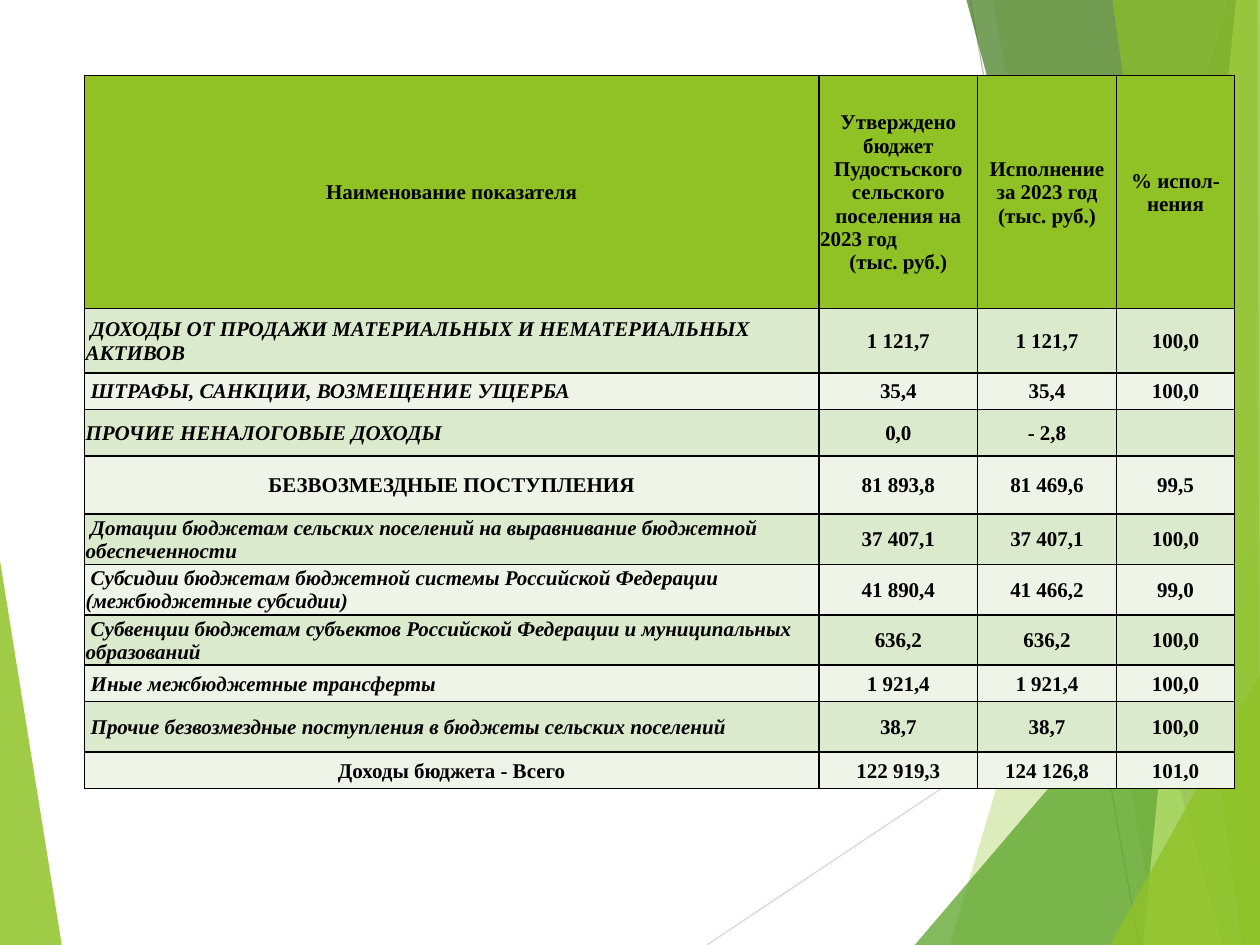
"""Build the slide with the table of budget income execution for 2023."""
from lxml import etree
from pptx import Presentation
from pptx.dml.color import RGBColor
from pptx.enum.shapes import MSO_CONNECTOR
from pptx.enum.text import MSO_ANCHOR, PP_ALIGN
from pptx.oxml import parse_xml
from pptx.oxml.ns import nsdecls, qn
from pptx.util import Inches, Pt

STRAIGHT = MSO_CONNECTOR.STRAIGHT
MIDDLE = MSO_ANCHOR.MIDDLE
LEFT, CENTER = PP_ALIGN.LEFT, PP_ALIGN.CENTER

COLORS = {
    "lime": "90C226",
    "green": "54A021",
    "forest": "3F7819",
    "pale_lime": "C0E474",
    "light_gray": "D9D9D9",
    "gray": "BFBFBF",
    "odd_row": "DBE9CD",
    "even_row": "EEF4E8",
    "black": "000000",
}

RAYS = [
    ([(9.75, 0), (7.54, 7.5), (10, 7.5), (10, 0)], "lime", 30),
    ([(7.88, 0), (9.19, 7.5), (10, 7.5), (10, 0)], "lime", 20),
    ([(7.26, 7.5), (10, 4.29), (10, 7.5)], "green", 72),
    ([(7.67, 0), (9.7, 7.5), (10, 7.5), (10, 0)], "forest", 70),
    ([(9.81, 0), (9.07, 7.5), (10, 7.5), (10, 0)], "pale_lime", 70),
    ([(8.83, 0), (9.86, 7.5), (10, 7.5), (9.98, 0)], "lime", 65),
    ([(8.81, 7.5), (10, 5.35), (10, 7.5)], "lime", 80),
]

COLUMN_WIDTHS = [5.83, 1.26, 1.1, 0.94]
ROW_HEIGHTS = [1.85, 0.51, 0.29, 0.37, 0.46, 0.4, 0.4, 0.4, 0.29, 0.4, 0.29]

HEADER = [
    [("Наименование показателя", CENTER)],
    [
        ("Утверждено бюджет Пудостьского сельского поселения на", CENTER),
        ("2023 год", LEFT),
        ("(тыс. руб.)", CENTER),
    ],
    [("Исполнение за 2023 год (тыс. руб.)", CENTER)],
    [("% испол-нения", CENTER)],
]

ITEM = {"align": LEFT, "italic": True, "indent": 0.04}
FLUSH_ITEM = {"align": LEFT, "italic": True}
TOTAL = {"align": CENTER}

ROWS = [
    (ITEM, "ДОХОДЫ ОТ ПРОДАЖИ МАТЕРИАЛЬНЫХ И НЕМАТЕРИАЛЬНЫХ АКТИВОВ",
     "1 121,7", "1 121,7", "100,0"),
    (ITEM, "ШТРАФЫ, САНКЦИИ, ВОЗМЕЩЕНИЕ УЩЕРБА", "35,4", "35,4", "100,0"),
    (FLUSH_ITEM, "ПРОЧИЕ НЕНАЛОГОВЫЕ ДОХОДЫ", "0,0", "- 2,8", ""),
    (TOTAL, "БЕЗВОЗМЕЗДНЫЕ ПОСТУПЛЕНИЯ", "81 893,8", "81 469,6", "99,5"),
    (ITEM, "Дотации бюджетам сельских поселений на выравнивание бюджетной обеспеченности",
     "37 407,1", "37 407,1", "100,0"),
    (ITEM, "Субсидии бюджетам бюджетной системы Российской Федерации (межбюджетные субсидии)",
     "41 890,4", "41 466,2", "99,0"),
    (ITEM, "Субвенции бюджетам субъектов Российской Федерации и муниципальных образований",
     "636,2", "636,2", "100,0"),
    (ITEM, "Иные межбюджетные трансферты", "1 921,4", "1 921,4", "100,0"),
    (ITEM, "Прочие безвозмездные поступления в бюджеты сельских поселений",
     "38,7", "38,7", "100,0"),
    (TOTAL, "Доходы бюджета - Всего", "122 919,3", "124 126,8", "101,0"),
]


class SlideBuilder:
    font_format = {"name": "Times New Roman", "size": Pt(12), "bold": True}
    cell_format = {
        "vertical_anchor": MIDDLE,
        "margin_left": Inches(0.01),
        "margin_top": Inches(0.01),
        "margin_right": Inches(0.01),
        "margin_bottom": 0,
    }

    def __init__(self, slide):
        self.slide = slide

    def color(self, name):
        return RGBColor.from_string(COLORS[name])

    def polygon(self, points, color, opacity):
        corners = [(Inches(x), Inches(y)) for x, y in points]
        builder = self.slide.shapes.build_freeform(*corners[0])
        builder.add_line_segments(corners[1:])
        shape = builder.convert_to_shape()
        shape.shadow.inherit = False
        shape.line.fill.background()
        shape.fill.solid()
        shape.fill.fore_color.rgb = self.color(color)
        color_element = next(shape.element.spPr.iter(qn("a:srgbClr")))
        alpha = etree.SubElement(color_element, qn("a:alpha"))
        alpha.set("val", str(opacity * 1000))

    def line(self, start, end, color):
        ends = [Inches(value) for value in (*start, *end)]
        connector = self.slide.shapes.add_connector(STRAIGHT, *ends)
        connector.line.width = Pt(0.75)
        connector.line.color.rgb = self.color(color)
        etree.SubElement(connector.element.spPr, qn("a:effectLst"))

    def table(self, left, top, widths, heights):
        frame = self.slide.shapes.add_table(
            len(heights), len(widths), Inches(left), Inches(top),
            Inches(sum(widths)), Inches(sum(heights)))
        for column, width in zip(frame.table.columns, widths):
            column.width = Inches(width)
        for row, height in zip(frame.table.rows, heights):
            row.height = Inches(height)
        return frame.table

    def cell(self, cell, paragraphs, fill, italic=False, indent=0):
        for name, value in self.cell_format.items():
            setattr(cell, name, value)
        properties = cell._tc.get_or_add_tcPr()
        for side in ("lnL", "lnR", "lnT", "lnB"):
            properties.append(parse_xml(
                f'<a:{side} {nsdecls("a")} w="{Pt(1)}"><a:solidFill>'
                f'<a:srgbClr val="{COLORS["black"]}"/></a:solidFill></a:{side}>'))
        cell.fill.solid()
        cell.fill.fore_color.rgb = self.color(fill)
        for index, (text, align) in enumerate(paragraphs):
            frame = cell.text_frame
            paragraph = frame.add_paragraph() if index else frame.paragraphs[0]
            paragraph.alignment = align
            if indent:
                paragraph_properties = paragraph._p.get_or_add_pPr()
                paragraph_properties.set("marL", "0")
                paragraph_properties.set("indent", str(Inches(indent)))
            if text:
                run = paragraph.add_run()
                run.text = text
                for name, value in self.font_format.items():
                    setattr(run.font, name, value)
                run.font.italic = italic
                run.font.color.rgb = self.color("black")


def main():
    presentation = Presentation()
    presentation.slide_width = Inches(10)
    presentation.slide_height = Inches(7.5)
    builder = SlideBuilder(presentation.slides.add_slide(presentation.slide_layouts[6]))

    builder.polygon([(0, 4.45), (0.49, 7.5), (0, 7.5)], "lime", 85)
    builder.line((5.61, 7.5), (10, 4.57), "light_gray")
    builder.line((7.7, 0), (9.04, 7.5), "gray")
    for points, color, opacity in RAYS:
        builder.polygon(points, color, opacity)

    table = builder.table(0.67, 0.6, COLUMN_WIDTHS, ROW_HEIGHTS)
    for column, paragraphs in enumerate(HEADER):
        builder.cell(table.cell(0, column), paragraphs, "lime")
    for row, (style, label, *values) in enumerate(ROWS, start=1):
        fill = "odd_row" if row % 2 else "even_row"
        builder.cell(table.cell(row, 0), [(label, style["align"])], fill,
                     style.get("italic", False), style.get("indent", 0))
        for column, value in enumerate(values, start=1):
            builder.cell(table.cell(row, column), [(value, CENTER)], fill)

    presentation.save("out.pptx")


if __name__ == "__main__":
    main()
